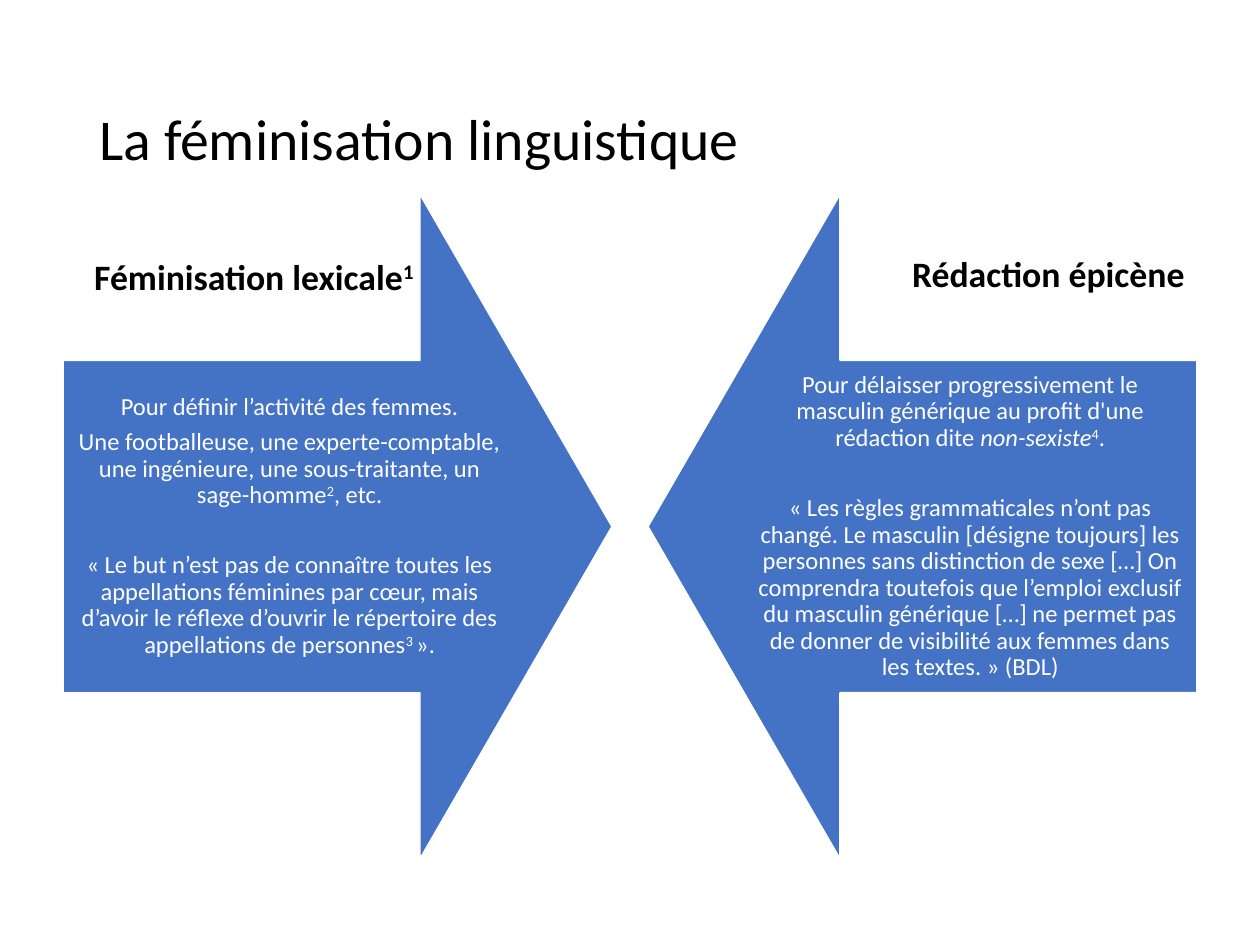
from pptx import Presentation
from pptx.dml.color import RGBColor
from pptx.enum.shapes import MSO_SHAPE
from pptx.enum.text import MSO_ANCHOR, PP_ALIGN
from pptx.util import Cm, Pt

BLUE = RGBColor(0x44, 0x72, 0xC4)
WHITE = RGBColor(0xFF, 0xFF, 0xFF)
BLACK = RGBColor(0x00, 0x00, 0x00)

DOWN_ARROW = MSO_SHAPE.DOWN_ARROW
MIDDLE, BOTTOM = MSO_ANCHOR.MIDDLE, MSO_ANCHOR.BOTTOM
LEFT, CENTER, RIGHT = PP_ALIGN.LEFT, PP_ALIGN.CENTER, PP_ALIGN.RIGHT

SLIDE_W, SLIDE_H = 25.4, 19.05
ARROW_X, ARROW_W, ARROW_H = 0.1, 13.41, 11.07
BODY_X, BODY_W = 1.27, 9.14
QUOTE_GAP = 20

# Each paragraph: space before in points, then runs of (text, style)
LEXICAL = [
    (0, [("Pour définir l’activité des femmes.", "")]),
    (0, [("Une footballeuse, une experte-comptable, une ingénieure, "
          "une sous-traitante, un sage-homme", ""),
         ("2", "super"), (", etc.", "")]),
    (QUOTE_GAP, [("« Le but n’est pas de connaître toutes les appellations "
                  "féminines par cœur, mais d’avoir le réflexe d’ouvrir le "
                  "répertoire des appellations de personnes", ""),
                 ("3 ", "super"), ("».", "")]),
]
EPICENE = [
    (0, [("Pour délaisser progressivement le masculin générique au profit "
          "d'une rédaction dite ", ""),
         ("non-sexiste", "italic"), ("4", "super"), (".", "")]),
    (QUOTE_GAP, [("« Les règles grammaticales n’ont pas changé. Le masculin "
                  "[désigne toujours] les personnes sans distinction de sexe "
                  "[…] On comprendra toutefois que l’emploi exclusif du "
                  "masculin générique […] ne permet pas de donner de "
                  "visibilité aux femmes dans les textes. » (BDL)", "")]),
]


def write_text(tf, paragraphs, size, color, font="Calibri", bold=False,
               align=LEFT, spacing=0.9, after=0):
    for i, (before, runs) in enumerate(paragraphs):
        p = tf.paragraphs[0] if i == 0 else tf.add_paragraph()
        p.alignment = align
        p.line_spacing = spacing
        p.space_before, p.space_after = Pt(before), Pt(after)
        for text, style in runs:
            r = p.add_run()
            r.text = text
            r.font.name, r.font.size = font, Pt(size)
            r.font.bold, r.font.italic = bold, style == "italic"
            r.font.color.rgb = color
            if style == "super":
                r._r.get_or_add_rPr().set("baseline", "30000")


class SlideBuilder:
    def __init__(self, slide, fill=BLUE, outline=WHITE):
        self.slide, self.fill, self.outline = slide, fill, outline

    def arrow(self, x, y, w, h, rotation):
        sp = self.slide.shapes.add_shape(DOWN_ARROW, Cm(x), Cm(y), Cm(w), Cm(h))
        sp.rotation = rotation
        sp.adjustments[0], sp.adjustments[1] = 0.5, 0.35
        sp.shadow.inherit = False
        sp.fill.solid()
        sp.fill.fore_color.rgb = self.fill
        sp.line.color.rgb = self.outline
        sp.line.width = Pt(1)

    def text(self, x, y, w, h, paragraphs, anchor=MIDDLE, inset=None, **style):
        sp = self.slide.shapes.add_textbox(Cm(x), Cm(y), Cm(w), Cm(h))
        tf = sp.text_frame
        tf.word_wrap = True
        tf.vertical_anchor = anchor
        if inset is not None:
            tf.margin_left = tf.margin_right = Cm(inset)
            tf.margin_top = tf.margin_bottom = Cm(inset)
        write_text(tf, paragraphs, **style)

    def heading(self, x, y, w, h, runs, align):
        self.text(x, y, w, h, [(7.5, runs)], anchor=BOTTOM, size=20.4,
                  color=BLACK, bold=True, align=align, spacing=0.8)


def main():
    prs = Presentation()
    prs.slide_width, prs.slide_height = Cm(SLIDE_W), Cm(SLIDE_H)
    s = SlideBuilder(prs.slides.add_slide(prs.slide_layouts[6]))

    # Facing arrows, mirrored about the slide's centre
    sides = [
        (ARROW_X, BODY_X, 270, LEXICAL),
        (SLIDE_W - ARROW_X - ARROW_W, SLIDE_W - BODY_X - BODY_W, 90, EPICENE),
    ]
    for arrow_x, body_x, rotation, paragraphs in sides:
        s.arrow(arrow_x, 5.08, ARROW_W, ARROW_H, rotation)
        s.text(body_x, 7.26, BODY_W, 6.71, paragraphs, inset=0.28,
               size=14, color=WHITE, align=CENTER, after=5)

    # Title
    s.text(1.75, 1.02, 21.9, 3.68, [(0, [("La féminisation linguistique", "")])],
           size=33, color=BLACK)

    # Headings above the arrows
    s.heading(1.65, 4.7, 7.47, 1.42,
              [("Féminisation lexicale", ""), ("1", "super")], LEFT)
    s.heading(12.9, 4.27, 11.23, 1.78, [("Rédaction épicène", "")], RIGHT)

    prs.save("out.pptx")


if __name__ == "__main__":
    main()
